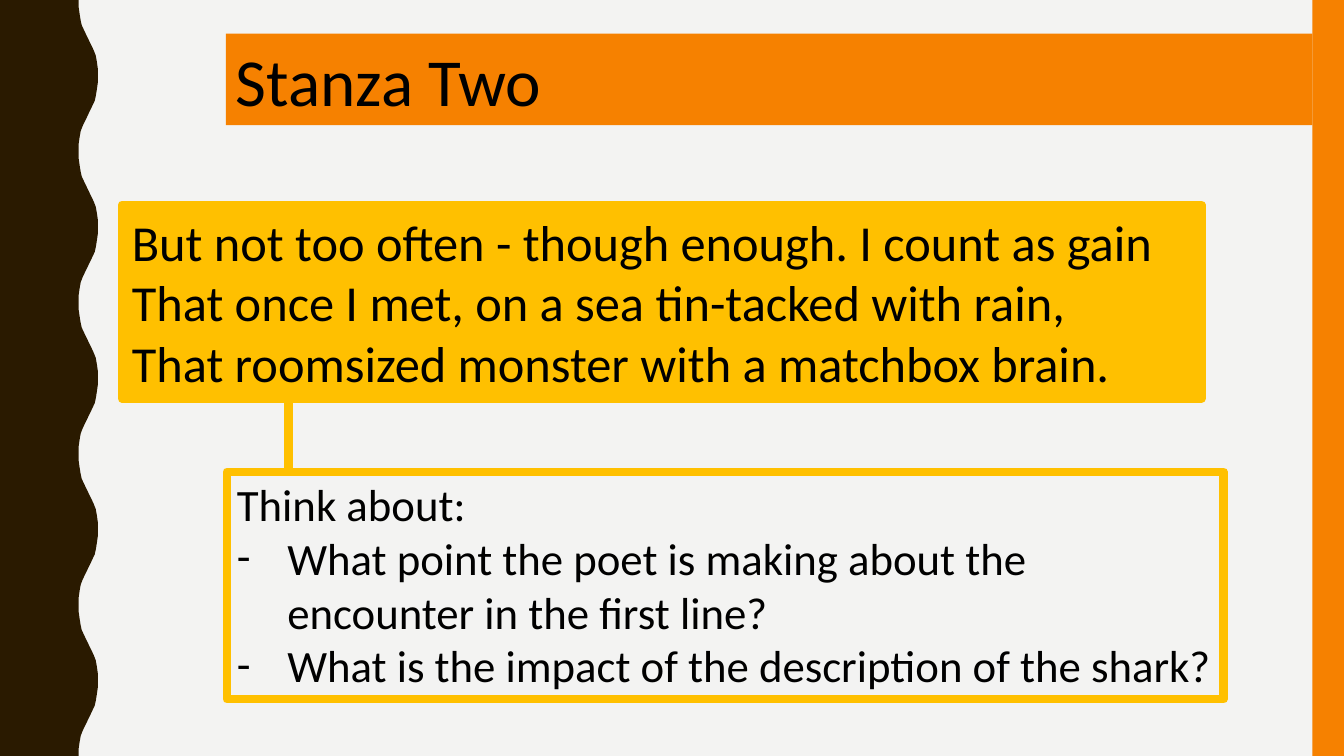
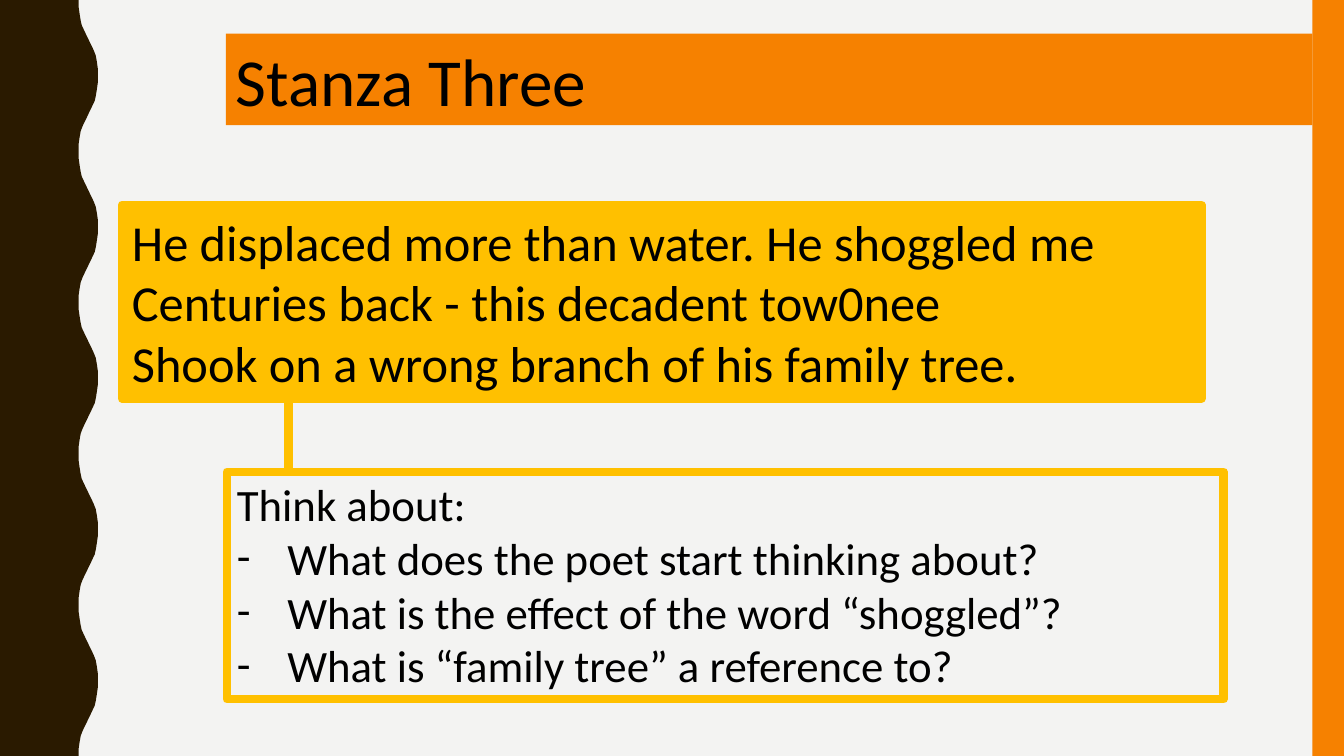
from typing import NamedTuple

from lxml.etree import SubElement
from pptx import Presentation
from pptx.dml.color import RGBColor
from pptx.enum.shapes import MSO_CONNECTOR as Connector, MSO_SHAPE as Shape
from pptx.enum.text import MSO_ANCHOR as Anchor, MSO_AUTO_SIZE as AutoSize, PP_ALIGN as Align
from pptx.oxml.ns import qn
from pptx.util import Pt

PAPER = RGBColor(0xF3, 0xF3, 0xF2)
BROWN = RGBColor(0x2A, 0x1A, 0x00)
ORANGE = RGBColor(0xF6, 0x81, 0x00)
AMBER = RGBColor(0xFF, 0xC0, 0x00)
BLACK = RGBColor(0, 0, 0)
FONT = "Calibri"
BORDER = 6
BULLET_INDENT = 36

SLIDE_WIDTH, SLIDE_HEIGHT = 960, 540
WAVE_LEFT, HALF_WAVE = 56.2, 54
# Offsets (right, down) along one outward half of the wave
WAVE_PROFILE = [
    (0, 5), (0.7, 10), (1.4, 14.4), (2.2, 18), (3.6, 21), (5, 24), (6.5, 27),
    (7.9, 30), (9.4, 33), (10.8, 36), (12.2, 39.6), (13, 44), (13.7, 49), (13.7, 54),
]
WAVE_DEPTH = WAVE_PROFILE[-1][0]


class Box(NamedTuple):
    left: float
    top: float
    width: float
    height: float


class Stanza(NamedTuple):
    title: str
    verses: list[str]
    questions: list[str]


STRIP = Box(937.4, 0, 22.6, SLIDE_HEIGHT)
TITLE = Box(161.3, 24, 776.1, 65.4)
VERSES = Box(87.1, 146.3, 771.1, 138.5)
QUESTIONS = Box(162, 337, 712.1, 162.5)
LINK_X = 206

STANZAS = [
    Stanza(
        "Stanza Two",
        ["But not too often - though enough. I count as gain",
         "That once I met, on a sea tin-tacked with rain,",
         "That roomsized monster with a matchbox brain."],
        ["What point the poet is making about the encounter in the first line?",
         "What is the impact of the description of the shark?"],
    ),
    Stanza(
        "Stanza Three",
        ["He displaced more than water. He shoggled me",
         "Centuries back - this decadent tow0nee",
         "Shook on a wrong branch of his family tree."],
        ["What does the poet start thinking about?",
         "What is the effect of the word “shoggled”?",
         "What is “family tree” a reference to?"],
    ),
]


def place(shape, box: Box) -> None:
    shape.left, shape.top, shape.width, shape.height = map(Pt, box)


def paint(shape, fill: RGBColor) -> None:
    shape.fill.solid()
    shape.fill.fore_color.rgb = fill


def outline(shape) -> None:
    shape.line.color.rgb = AMBER
    shape.line.width = Pt(BORDER)


def write(shape, text: str, size: float, anchor: Anchor = Anchor.MIDDLE) -> None:
    frame = shape.text_frame
    frame.text = text
    frame.word_wrap = True
    frame.auto_size = AutoSize.NONE
    frame.vertical_anchor = anchor
    for paragraph in frame.paragraphs:
        paragraph.alignment = Align.LEFT
        paragraph.space_before = Pt(0)
        for run in paragraph.runs:
            run.font.name = FONT
            run.font.size = Pt(size)
            run.font.color.rgb = BLACK


def set_bullet(paragraph, character: str = "") -> None:
    """Give the paragraph a hanging bullet, or none if no character is given."""
    properties = paragraph._p.get_or_add_pPr()
    indent = Pt(BULLET_INDENT) if character else 0
    properties.set("marL", str(indent))
    properties.set("indent", str(-indent))
    if character:
        SubElement(properties, qn("a:buFont")).set("typeface", FONT)
        SubElement(properties, qn("a:buChar")).set("char", character)
    else:
        SubElement(properties, qn("a:buNone"))


def wave_points() -> list[tuple[int, int]]:
    """Return the band's outline after its top left corner."""
    points = [(WAVE_LEFT, 0)]
    for half in range(SLIDE_HEIGHT // HALF_WAVE):
        for right, down in WAVE_PROFILE:
            offset = WAVE_DEPTH - right if half % 2 else right
            points.append((WAVE_LEFT + offset, half * HALF_WAVE + down))
    points.append((0, SLIDE_HEIGHT))
    return [(Pt(x), Pt(y)) for x, y in points]


def add_rectangle(slide, box: Box, fill: RGBColor):
    rectangle = slide.shapes.add_shape(Shape.RECTANGLE, *map(Pt, box))
    rectangle.shadow.inherit = False
    rectangle.line.fill.background()
    paint(rectangle, fill)
    return rectangle


def decorate_master(master, slide) -> None:
    """Draw the side bands on a slide, then move them to the master."""
    paint(master.background, PAPER)
    builder = slide.shapes.build_freeform(0, 0)
    builder.add_line_segments(wave_points(), close=True)
    wave = builder.convert_to_shape()
    wave.shadow.inherit = False
    wave.line.fill.background()
    paint(wave, BROWN)
    strip = add_rectangle(slide, STRIP, ORANGE)
    for band in (strip, wave):
        master.shapes.element.insert(2, band.element)


def add_link(slide) -> None:
    """Join the verses to the questions."""
    bottom = VERSES.top + VERSES.height
    link = slide.shapes.add_connector(
        Connector.STRAIGHT, Pt(LINK_X), Pt(bottom), Pt(LINK_X), Pt(QUESTIONS.top))
    outline(link)
    SubElement(link.element.spPr, qn("a:effectLst"))


def fill_slide(slide, stanza: Stanza) -> None:
    title, questions = slide.placeholders
    place(title, TITLE)
    paint(title, ORANGE)
    write(title, stanza.title, 48)

    verses = add_rectangle(slide, VERSES, AMBER)
    outline(verses)
    write(verses, "\n".join(stanza.verses), 36)

    place(questions, QUESTIONS)
    outline(questions)
    write(questions, "\n".join(["Think about:", *stanza.questions]), 32, Anchor.TOP)
    heading, *items = questions.text_frame.paragraphs
    set_bullet(heading)
    for item in items:
        set_bullet(item, "-")

    add_link(slide)


def main() -> None:
    deck = Presentation()
    deck.slide_width, deck.slide_height = Pt(SLIDE_WIDTH), Pt(SLIDE_HEIGHT)
    title_and_content = deck.slide_layouts[1]
    slides = [deck.slides.add_slide(title_and_content) for _ in STANZAS]
    decorate_master(deck.slide_master, slides[0])
    for slide, stanza in zip(slides, STANZAS):
        fill_slide(slide, stanza)
    deck.save("out.pptx")


if __name__ == "__main__":
    main()
